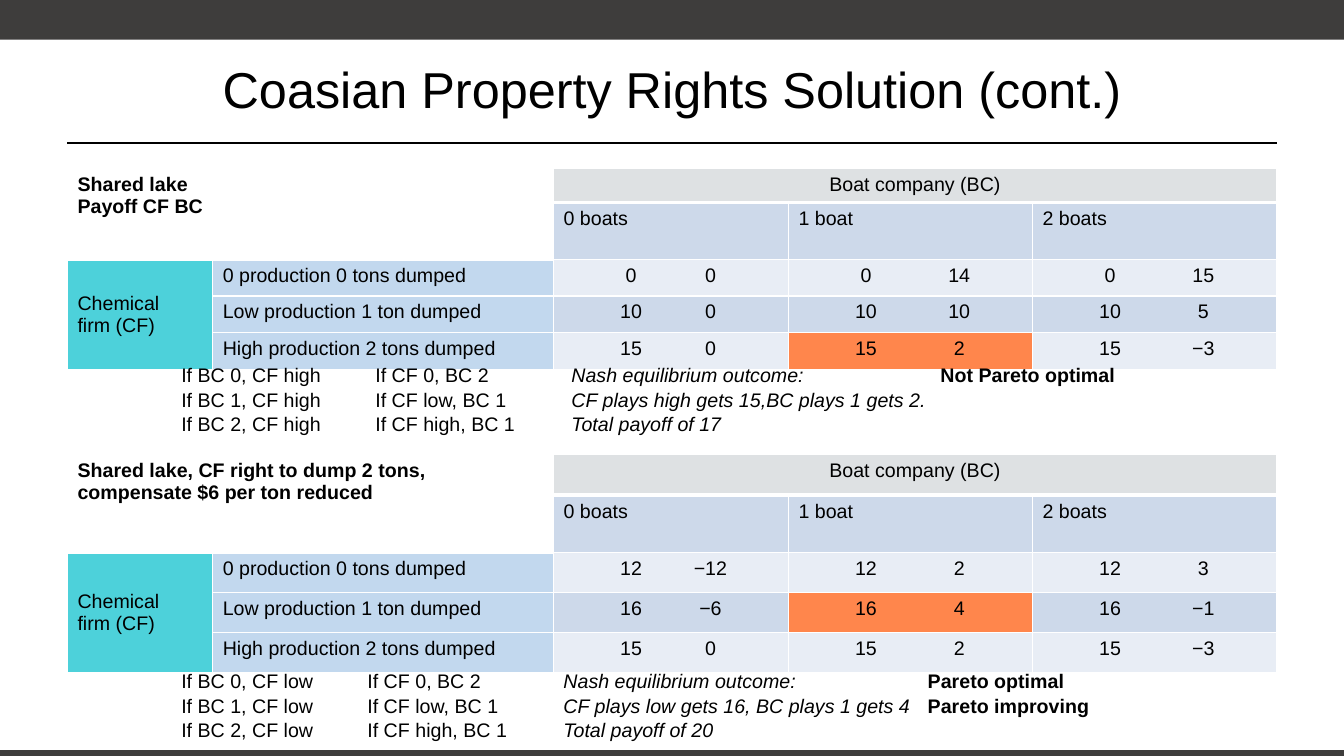
from lxml.etree import SubElement
from pptx import Presentation
from pptx.dml.color import RGBColor
from pptx.enum.shapes import MSO_CONNECTOR as Connector, MSO_SHAPE as Shape
from pptx.enum.text import MSO_ANCHOR as Anchor, PP_ALIGN as Align
from pptx.oxml.ns import qn
from pptx.util import Cm, Pt

LEFT, WIDTH = 1.7, 30.48
COLUMNS = (3.66, 8.59, 5.92, 6.15, 6.15)
FIRST_PAYOFF = 1.7
SECOND_PAYOFF = (3.7, 4.05, 4.05)
BOATS = ("0 boats", "1 boat", "2 boats")
STRATEGIES = ("0 production 0 tons dumped", "Low production 1 ton dumped",
              "High production 2 tons dumped")
DARK, BLACK, WHITE = "3E3D3C", "000000", "FFFFFF"
HEADER, FIRM, STRATEGY, EQUILIBRIUM = "DEE1E3", "4DD1DA", "C2D8EE", "FF864C"
LIGHT_BAND, DARK_BAND = "E8EDF5", "CDD9EA"


def color(value):
    return RGBColor.from_string(value)


class SlideBuilder:
    """Holds the text style and the current slide."""

    def __init__(self, slide):
        self.slide = slide
        self.font = {"name": "Arial", "size": Pt(14), "bold": False, "italic": False}

    def style(self, run, **changes):
        for name, value in {**self.font, **changes}.items():
            setattr(run.font, name, value)
        run.font.color.rgb = color(BLACK)

    def tabs(self, paragraph, stops, align):
        tab_list = SubElement(paragraph._p.get_or_add_pPr(), qn("a:tabLst"))
        for stop in stops:
            SubElement(tab_list, qn("a:tab"), pos=str(Cm(stop)), algn=align)

    def band(self, top, height):
        shape = self.slide.shapes.add_shape(Shape.RECTANGLE, 0, Cm(top), Cm(33.87), Cm(height))
        shape.shadow.inherit = False
        shape.fill.solid()
        shape.fill.fore_color.rgb = color(DARK)
        shape.line.fill.background()

    def rule(self, top):
        line = self.slide.shapes.add_connector(
            Connector.STRAIGHT, Cm(LEFT), Cm(top), Cm(LEFT + WIDTH), Cm(top))
        line.line.color.rgb = color(BLACK)
        line.line.width = Pt(1.25)
        SubElement(line._element.spPr, qn("a:effectLst"))

    def text_box(self, left, top, width, height):
        frame = self.slide.shapes.add_textbox(Cm(left), Cm(top), Cm(width), Cm(height)).text_frame
        frame.word_wrap = True
        return frame

    def title(self, text):
        frame = self.text_box(LEFT, 0.64, WIDTH, 3.18)
        frame.vertical_anchor = Anchor.MIDDLE
        paragraph = frame.paragraphs[0]
        paragraph.alignment = Align.CENTER
        paragraph.text = text
        self.style(paragraph.runs[0], size=Pt(36))

    def notes(self, top, height, stops, lines):
        frame = self.text_box(4.32, top, 25.26, height)
        for index, (replies, outcome, verdict) in enumerate(lines):
            paragraph = frame.add_paragraph() if index else frame.paragraphs[0]
            paragraph.line_spacing = 1.04
            self.tabs(paragraph, stops, "l")
            parts = [(replies + "\t", {}), (outcome, {"italic": True})]
            if verdict:
                parts.append(("\t" + verdict, {"bold": True}))
            for text, changes in parts:
                run = paragraph.add_run()
                run.text = text
                self.style(run, **changes)

    def borders(self, cell, row):
        properties = cell._tc.get_or_add_tcPr()
        thick = {(0, "B"), (1, "T")}
        for side in "LRTB":
            width = Pt(3 if (row, side) in thick else 1)
            line = SubElement(properties, qn("a:ln" + side), w=str(width))
            SubElement(SubElement(line, qn("a:solidFill")), qn("a:srgbClr"), val=WHITE)

    def cell(self, cell, text, fill=None, align=Align.LEFT, bold=False, stops=()):
        if fill:
            cell.fill.solid()
            cell.fill.fore_color.rgb = color(fill)
        cell.text_frame.text = text
        for paragraph in cell.text_frame.paragraphs:
            paragraph.alignment = align
            if stops:
                self.tabs(paragraph, stops, "ctr")
            for run in paragraph.runs:
                self.style(run, bold=bold)

    def payoff_table(self, top, rows, caption, payoffs, equilibrium):
        table = self.slide.shapes.add_table(
            len(rows), len(COLUMNS), Cm(LEFT), Cm(top), Cm(WIDTH), Cm(sum(rows))).table
        table.first_row = table.horz_banding = False
        for column, width in zip(table.columns, COLUMNS):
            column.width = Cm(width)
        for index, height in enumerate(rows):
            table.rows[index].height = Cm(height)
            for cell in table.rows[index].cells:
                self.borders(cell, index)
                cell.fill.background()

        # Headings
        for first, last in (((0, 0), (1, 1)), ((0, 2), (0, 4)), ((2, 0), (4, 0))):
            table.cell(*first).merge(table.cell(*last))
        self.cell(table.cell(0, 0), caption, bold=True)
        self.cell(table.cell(0, 2), "Boat company (BC)", HEADER, Align.CENTER)
        self.cell(table.cell(2, 0), "Chemical\vfirm (CF)", FIRM)
        table.cell(2, 0).vertical_anchor = Anchor.MIDDLE
        for column, boats in enumerate(BOATS):
            self.cell(table.cell(1, column + 2), boats, DARK_BAND)

        # Strategies and payoffs
        for row, (strategy, pairs) in enumerate(zip(STRATEGIES, payoffs)):
            self.cell(table.cell(row + 2, 1), strategy, STRATEGY)
            for column, (firm, boat) in enumerate(pairs):
                band = DARK_BAND if row % 2 else LIGHT_BAND
                fill = EQUILIBRIUM if (row, column) == equilibrium else band
                text = f"\t{firm}\t{boat}".replace("-", "−")
                self.cell(table.cell(row + 2, column + 2), text, fill,
                          stops=(FIRST_PAYOFF, SECOND_PAYOFF[column]))


def main():
    presentation = Presentation()
    presentation.slide_width, presentation.slide_height = Cm(33.87), Cm(19.05)
    builder = SlideBuilder(presentation.slides.add_slide(presentation.slide_layouts[6]))

    # Frame and title
    builder.band(0, 1)
    builder.band(18.9, 0.15)
    builder.rule(3.6)
    builder.title("Coasian Property Rights Solution (cont.)")

    # Shared lake
    builder.payoff_table(
        4.24, (0.86, 1.38, 0.92, 0.92, 0.92), "Shared lake\nPayoff CF BC",
        (((0, 0), (0, 14), (0, 15)),
         ((10, 0), (10, 10), (10, 5)),
         ((15, 0), (15, 2), (15, -3))), (2, 1))
    builder.notes(9, 2.64, (4.89, 9.83, 19.13), (
        ("If BC 0, CF high\tIf CF 0, BC 2", "Nash equilibrium outcome:", "Not Pareto optimal"),
        ("If BC 1, CF high\tIf CF low, BC 1", "CF plays high gets 15,BC plays 1 gets 2.", ""),
        ("If BC 2, CF high\tIf CF high, BC 1", "Total payoff of 17", "")))

    # Shared lake with the right to dump
    builder.payoff_table(
        11.46, (1.02, 1.36, 1.01, 1.01, 1.01),
        "Shared lake, CF right to dump 2 tons, compensate $6 per ton reduced",
        (((12, -12), (12, 2), (12, 3)),
         ((16, -6), (16, 4), (16, -1)),
         ((15, 0), (15, 2), (15, -3))), (1, 1))
    builder.notes(16.71, 2.06, (4.69, 9.63, 18.81), (
        ("If BC 0, CF low\tIf CF 0, BC 2", "Nash equilibrium outcome:", "Pareto optimal"),
        ("If BC 1, CF low\tIf CF low, BC 1", "CF plays low gets 16, BC plays 1 gets 4",
         "Pareto improving"),
        ("If BC 2, CF low\tIf CF high, BC 1", "Total payoff of 20", "")))

    presentation.save("out.pptx")


if __name__ == "__main__":
    main()
